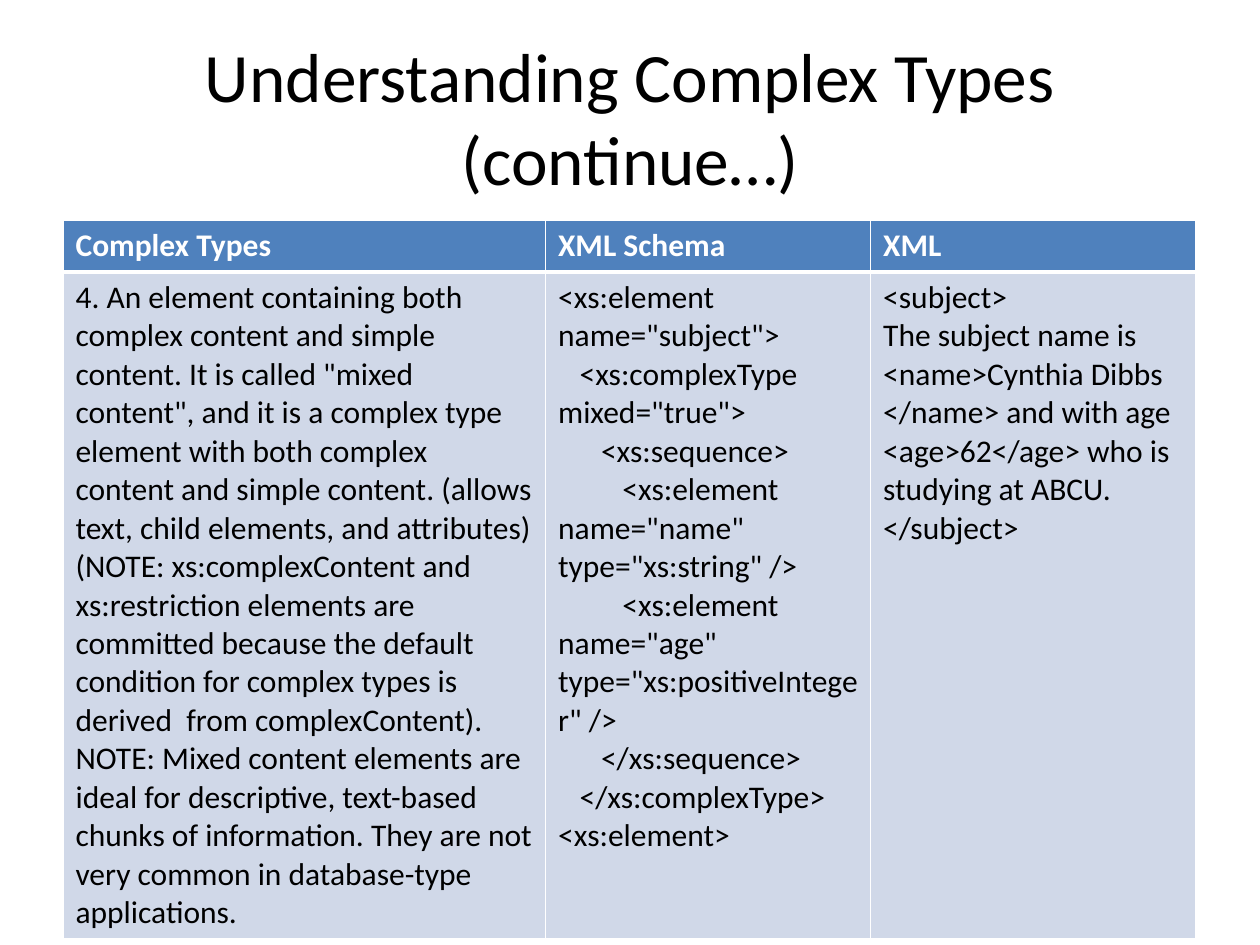
"""Build a slide that explains mixed-content complex types in XML Schema."""
import pptx
import pptx.dml.color
import pptx.enum.text
import pptx.oxml
import pptx.oxml.ns
import pptx.util

Inches, Pt = pptx.util.Inches, pptx.util.Pt

TITLE = "Understanding Complex Types (continue…)"
HEADERS = ["Complex Types", "XML Schema", "XML"]
DESCRIPTION = [
    (0, '4. An element containing both complex content and simple content. It is called '
        '"mixed content", and it is a complex type element with both complex content and '
        'simple content. (allows text, child elements, and attributes)'),
    (0, "(NOTE: xs:complexContent and xs:restriction elements are committed because the "
        "default condition for complex types is derived  from complexContent)."),
    (0, "NOTE: Mixed content elements are ideal for descriptive, text-based chunks of "
        "information. They are not very common in database-type applications."),
]
SCHEMA = [
    (0, '<xs:element name="subject">'),
    (1, '<xs:complexType mixed="true">'),
    (2, "<xs:sequence>"),
    (3, '<xs:element name="name" type="xs:string" />'),
    (3, '<xs:element name="age" type="xs:positiveInteger" />'),
    (2, "</xs:sequence>"),
    (1, "</xs:complexType>"),
    (0, "<xs:element>"),
]
INSTANCE = [
    (0, "<subject>"),
    (0, "The subject name is <name>Cynthia Dibbs"),
    (0, "</name> and with age <age>62</age> who is studying at ABCU."),
    (0, "</subject>"),
]
ROWS = [[[(0, header)] for header in HEADERS], [DESCRIPTION, SCHEMA, INSTANCE]]
ROW_STYLES = [
    {"fill": "4F81BD", "color": "FFFFFF", "bold": True, "top": 1, "bottom": 3},
    {"fill": "D0D8E8", "color": "000000", "bold": False, "top": 3, "bottom": 1},
]
COLUMN_WIDTHS = [3.83, 2.58, 2.58]
ROW_HEIGHTS = [0.41, 5.2]
INDENT_STEP = 0.17


def rgb(value):
    """Return the colour for a hex string."""
    return pptx.dml.color.RGBColor.from_string(value)


def format_font(font, color, **values):
    """Set the colour and the other values of a font."""
    font.color.rgb = rgb(color)
    for name, value in {"name": "Calibri", **values}.items():
        setattr(font, name, value)


def add_borders(cell, style):
    """Draw white borders on the four sides of a cell."""
    properties = cell._tc.get_or_add_tcPr()
    widths = {"L": 1, "R": 1, "T": style["top"], "B": style["bottom"]}
    for side, width in widths.items():
        properties.append(pptx.oxml.parse_xml(
            f'<a:ln{side} {pptx.oxml.ns.nsdecls("a")} w="{Pt(width)}"><a:solidFill>'
            f'<a:srgbClr val="FFFFFF"/></a:solidFill></a:ln{side}>'))


def fill_cell(cell, lines, style):
    """Write indented lines into a cell and format it."""
    add_borders(cell, style)
    cell.fill.solid()
    cell.fill.fore_color.rgb = rgb(style["fill"])
    for index, (level, text) in enumerate(lines):
        frame = cell.text_frame
        para = frame.add_paragraph() if index else frame.paragraphs[0]
        para._p.get_or_add_pPr().set("indent", str(Inches(level * INDENT_STEP)))
        span = para.add_run()
        span.text = text
        format_font(span.font, style["color"], size=Pt(18), bold=style["bold"])


def add_title(page):
    """Place and format the title."""
    title = page.shapes.title
    place = {"left": 0.5, "top": 0.3, "width": 9, "height": 1.25}
    for name, value in place.items():
        setattr(title, name, Inches(value))
    frame = title.text_frame
    frame.text = TITLE
    settings = {"word_wrap": True, "auto_size": pptx.enum.text.MSO_AUTO_SIZE.NONE,
                "vertical_anchor": pptx.enum.text.MSO_ANCHOR.MIDDLE}
    for name, value in settings.items():
        setattr(frame, name, value)
    para = frame.paragraphs[0]
    para.alignment = pptx.enum.text.PP_ALIGN.CENTER
    format_font(para.runs[0].font, "000000", size=Pt(39.6))


def add_types_table(page):
    """Add the table that sets the description beside its schema and XML."""
    table = page.shapes.add_table(
        len(ROWS), len(HEADERS), Inches(0.5), Inches(1.75),
        Inches(sum(COLUMN_WIDTHS)), Inches(sum(ROW_HEIGHTS))).table
    for column, width in zip(table.columns, COLUMN_WIDTHS):
        column.width = Inches(width)
    for row, height, contents, style in zip(table.rows, ROW_HEIGHTS, ROWS, ROW_STYLES):
        row.height = Inches(height)
        for cell, lines in zip(row.cells, contents):
            fill_cell(cell, lines, style)


def main():
    """Build and save the deck."""
    deck = pptx.Presentation()
    deck.slide_width, deck.slide_height = Inches(10), Inches(7.5)
    page = deck.slides.add_slide(deck.slide_layouts.get_by_name("Title Only"))
    add_title(page)
    add_types_table(page)
    deck.save("out.pptx")


if __name__ == "__main__":
    main()
